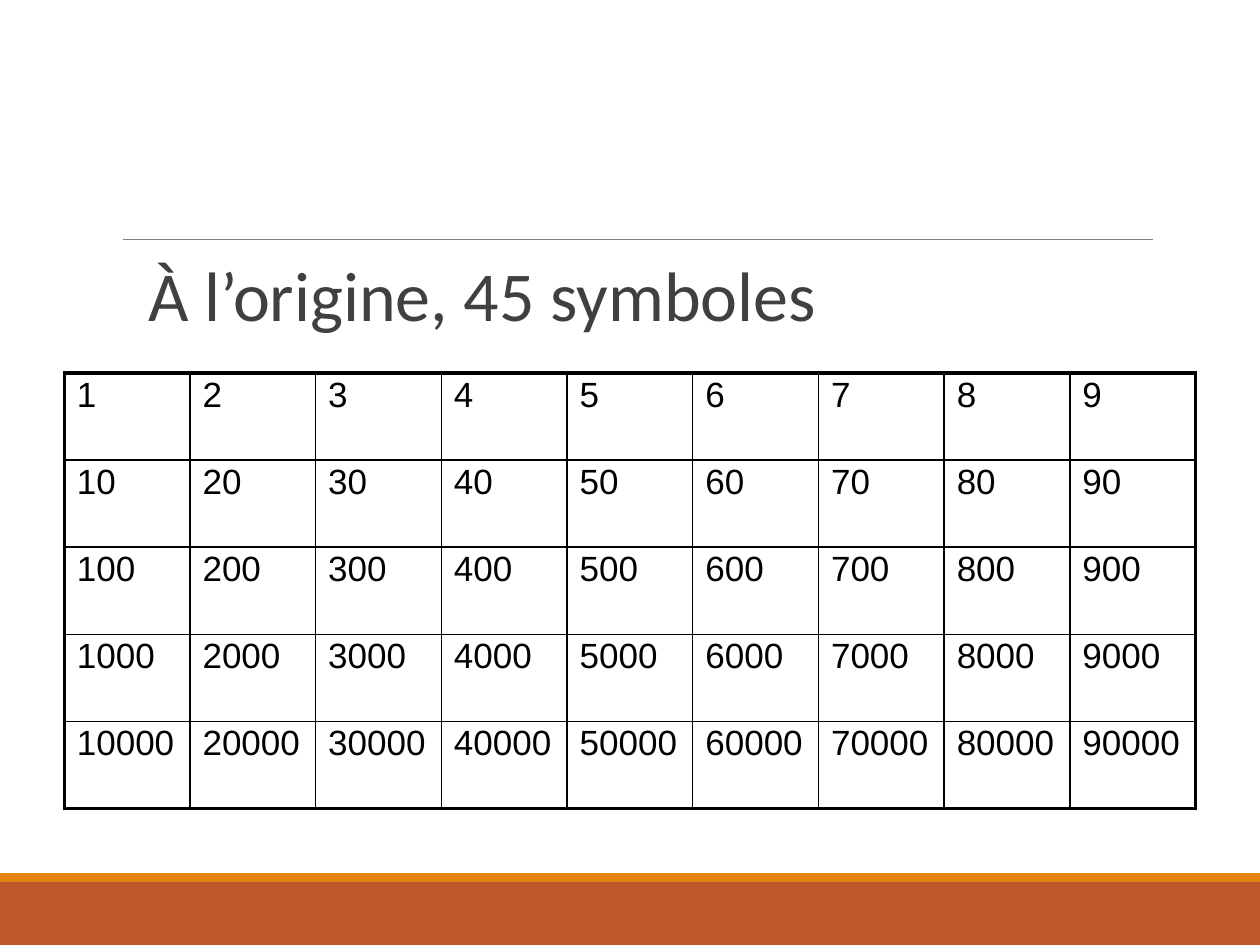
"""Build a slide with a table of the 45 symbols first in use."""
from typing import NamedTuple

from lxml import etree
from pptx import Presentation
from pptx.dml.color import RGBColor
from pptx.enum.shapes import MSO_CONNECTOR, MSO_SHAPE
from pptx.enum.text import MSO_ANCHOR, PP_ALIGN
from pptx.oxml.ns import qn
from pptx.util import Pt

RECT = MSO_SHAPE.RECTANGLE
LINE = MSO_CONNECTOR.STRAIGHT
TOP = MSO_ANCHOR.TOP
LEFT = PP_ALIGN.LEFT

RUST = RGBColor(0xBD, 0x58, 0x2C)
ORANGE = RGBColor(0xE4, 0x83, 0x12)
GREY = RGBColor(0x80, 0x80, 0x80)
DARK = RGBColor(0x40, 0x40, 0x40)
BLACK = RGBColor(0, 0, 0)

WIDTH, HEIGHT = 720, 540
ROWS, COLS = 5, 9
THICK, THIN = 2.25, 1


class Box(NamedTuple):
    """A place on the slide, in points."""

    left: float
    top: float
    width: float
    height: float


class Band(NamedTuple):
    """A filled strip at the foot of the slide."""

    box: Box
    color: RGBColor


BANDS = (
    Band(Box(0, 504, WIDTH, 36), RUST),
    Band(Box(0, 499, WIDTH, 5), ORANGE),
)
RULE = Box(70.56, 136.8, 588.24, 0)
TITLE = Box(64.8, 145.44, 594, 316.8)
GRID = Box(36.72, 213.12, 646.56, 249)


def points(box: Box) -> list[Pt]:
    """Turn a box into lengths."""
    return [Pt(side) for side in box]


def write(frame, text: str, *, font: str, size: float, color: RGBColor,
          before: float, after: float = 0):
    """Write one paragraph into a text frame and return it."""
    para = frame.paragraphs[0]
    para.alignment = LEFT
    para.line_spacing = 0.9
    para.space_before, para.space_after = Pt(before), Pt(after)
    run = para.add_run()
    run.text = text
    run.font.name, run.font.size = font, Pt(size)
    run.font.color.rgb = color
    return para


def add_color(parent, color: RGBColor) -> None:
    """Add a plain colour to an XML node."""
    etree.SubElement(parent, qn("a:srgbClr"), val=str(color))


def add_band(slide, band: Band) -> None:
    """Draw one strip."""
    shape = slide.shapes.add_shape(RECT, *points(band.box))
    shape.shadow.inherit = False
    shape.fill.solid()
    shape.fill.fore_color.rgb = band.color
    shape.line.fill.background()


def add_rule(slide, box: Box) -> None:
    """Draw the thin line above the title."""
    left, top, width, height = points(box)
    rule = slide.shapes.add_connector(LINE, left, top, left + width, top + height)
    rule.line.color.rgb = GREY
    rule.line.width = Pt(0.5)
    etree.SubElement(rule._element.spPr, qn("a:effectLst"))


def add_title(slide, box: Box, text: str) -> None:
    """Write the title with its blank bullet."""
    frame = slide.shapes.add_textbox(*points(box)).text_frame
    frame.word_wrap = True
    frame.vertical_anchor = TOP
    frame.margin_left = frame.margin_right = 0
    frame.margin_top = frame.margin_bottom = Pt(3.6)
    para = write(frame, text, font="Calibri", size=40, color=DARK,
                 before=12, after=2)
    props = para._p.get_or_add_pPr()
    props.set("marL", str(Pt(7.2)))
    props.set("indent", str(-Pt(7.2)))
    add_color(etree.SubElement(props, qn("a:buClr")), ORANGE)
    etree.SubElement(props, qn("a:buChar"), char=" ")


def set_edges(cell, row: int, col: int) -> None:
    """Rule a cell, with thick lines on the outer frame."""
    edges = {"L": col == 0, "R": col == COLS - 1,
             "T": row == 0, "B": row == ROWS - 1}
    props = cell._tc.get_or_add_tcPr()
    for place, (side, outer) in enumerate(edges.items()):
        width = Pt(THICK if outer else THIN)
        edge = etree.Element(qn(f"a:ln{side}"), w=str(width))
        add_color(etree.SubElement(edge, qn("a:solidFill")), BLACK)
        props.insert(place, edge)


def add_grid(slide, box: Box) -> None:
    """Fill the table with each digit times each power of ten."""
    table = slide.shapes.add_table(ROWS, COLS, *points(box)).table
    table.first_row = table.horz_banding = False
    for column in table.columns:
        column.width = Pt(box.width / COLS)
    for row in range(ROWS):
        table.rows[row].height = Pt(box.height / ROWS)
        for col in range(COLS):
            cell = table.cell(row, col)
            cell.fill.background()
            cell.vertical_anchor = TOP
            write(cell.text_frame, str((col + 1) * 10 ** row),
                  font="Arial", size=20, color=BLACK, before=4)
            set_edges(cell, row, col)


def main() -> None:
    """Build and save the slide."""
    deck = Presentation()
    deck.slide_width, deck.slide_height = Pt(WIDTH), Pt(HEIGHT)
    slide = deck.slides.add_slide(deck.slide_layouts[6])
    for band in BANDS:
        add_band(slide, band)
    add_rule(slide, RULE)
    add_title(slide, TITLE, "À l’origine, 45 symboles")
    add_grid(slide, GRID)
    deck.save("out.pptx")


if __name__ == "__main__":
    main()
